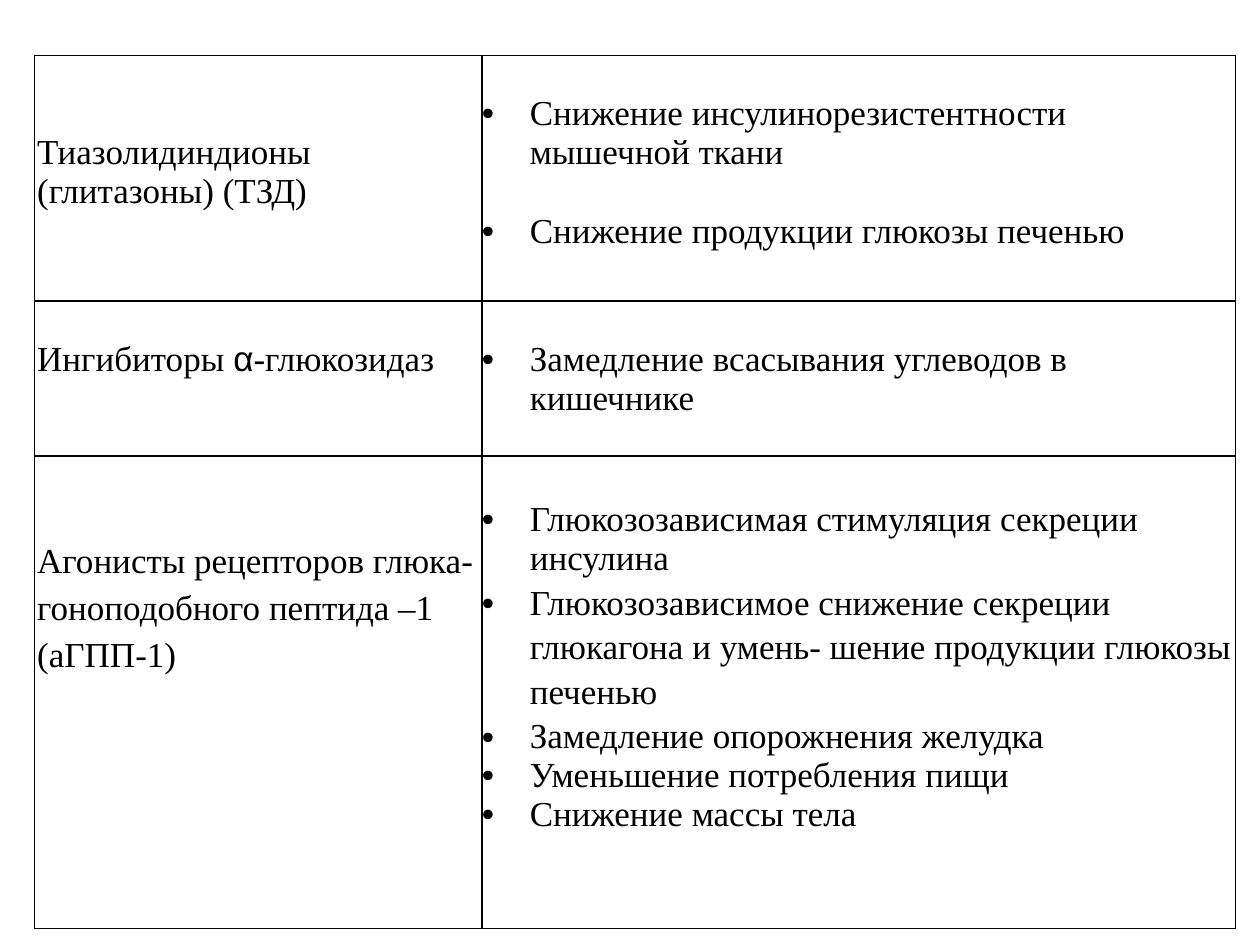
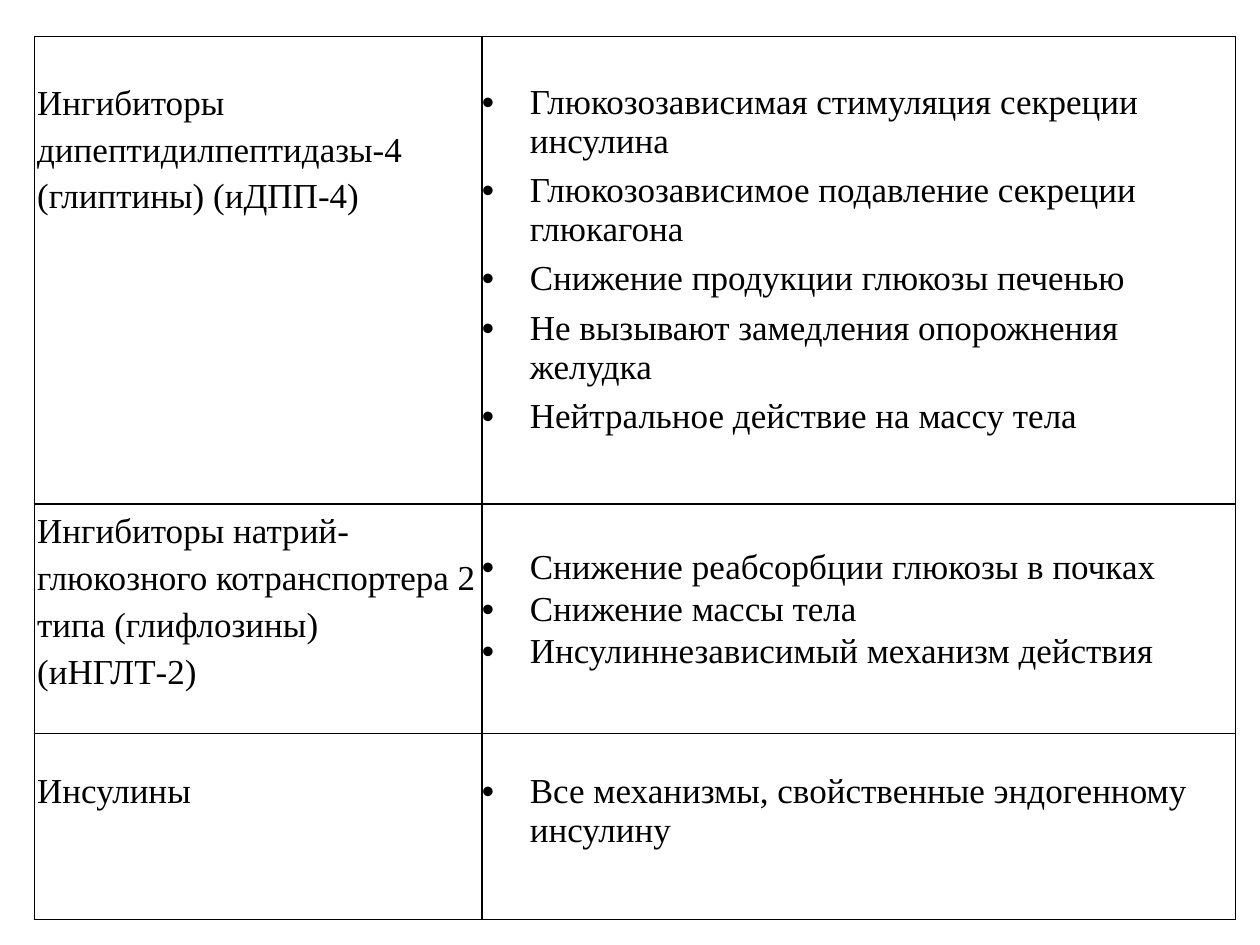
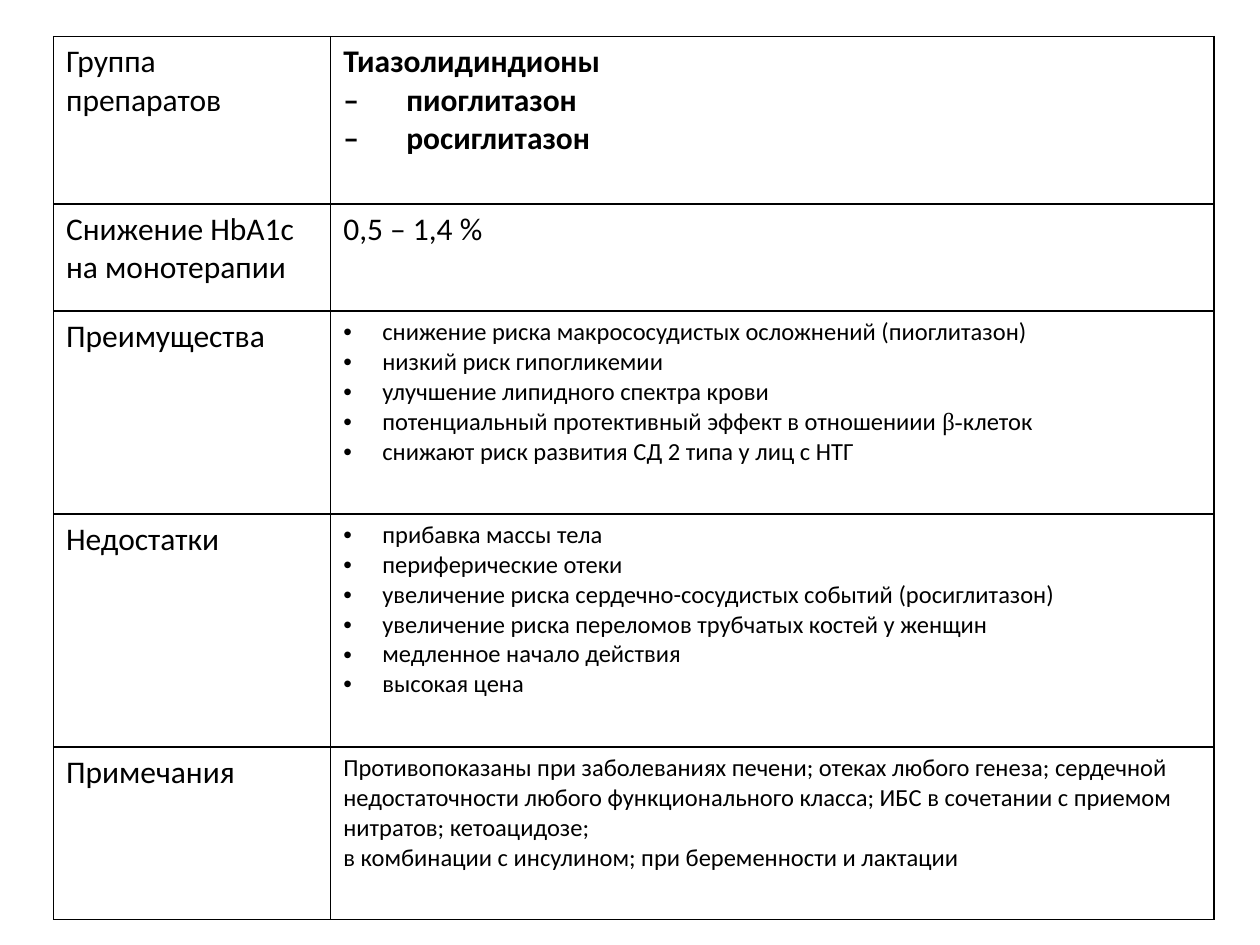
from lxml import etree
from pptx import Presentation
from pptx.dml.color import RGBColor
from pptx.oxml.ns import qn
from pptx.util import Inches, Pt

SLIDE_WIDTH, SLIDE_HEIGHT = 10, 7.5
BLACK, WHITE = "000000", "FFFFFF"
SERIF, SANS = "Times New Roman", "Calibri"
LINE = 0.31
LOOSE = 1.21
BLANK_LAYOUT = 6

SERIF_STYLE = {"name": SERIF, "size": Pt(20), "bold": False}
LABEL_STYLE = {"name": SANS, "size": Pt(18), "bold": False}
STRONG_STYLE = {**LABEL_STYLE, "bold": True}
DETAIL_STYLE = {**LABEL_STYLE, "size": Pt(14)}


def colour(value):
    return RGBColor.from_string(value)


def child(parent, tag, **attributes):
    return etree.SubElement(parent, qn(tag), attributes)


def set_indent(para, left, bullet):
    properties = para._p.get_or_add_pPr()
    properties.set("marL", str(Inches(left)))
    properties.set("indent", str(-Inches(left) if bullet else 0))
    if bullet:
        child(properties, "a:buFont", typeface="Arial")
        child(properties, "a:buChar", char=bullet)
    else:
        child(properties, "a:buNone")


def item(*spans, before=0, spacing=1.0):
    return {"spans": spans, "before": before, "spacing": spacing}


def block(*items, style=SERIF_STYLE, left=0.0, bullet=None, top=0.0):
    items = [item(entry) if isinstance(entry, str) else entry for entry in items]
    return {"items": items, "style": style, "left": left, "bullet": bullet, "top": top}


def drug_group(text, top=LINE, spacing=1.0):
    spans = text if isinstance(text, tuple) else (text,)
    return block(item(*spans, spacing=spacing), left=0.02, top=top)


def effects(*items, top=LINE):
    return block(*items, left=0.38, bullet="•", top=top)


def label(text):
    return block(text, style=LABEL_STYLE)


def details(*items):
    return block(*items, style=DETAIL_STYLE, left=0.31, bullet="•")


def write_block(cell, content):
    frame = cell.text_frame
    for index, entry in enumerate(content["items"]):
        para = frame.add_paragraph() if index else frame.paragraphs[0]
        para.line_spacing = entry["spacing"]
        para.space_before = Pt(entry["before"])
        set_indent(para, content["left"], content["bullet"])
        for part in entry["spans"]:
            text, font_name = part if isinstance(part, tuple) else (part, None)
            span = para.add_run()
            span.text = text
            for key, value in content["style"].items():
                setattr(span.font, key, value)
            if font_name:
                span.font.name = font_name
            span.font.color.rgb = colour(BLACK)


def draw_borders(cell):
    properties = cell._tc.get_or_add_tcPr()
    for side in "LRTB":
        line = child(properties, f"a:ln{side}", w=str(Pt(1)))
        child(child(line, "a:solidFill"), "a:srgbClr", val=BLACK)


def add_grid(deck, top, columns, heights, rows, side_margin, top_margin, fill=None):
    page = deck.slides.add_slide(deck.slide_layouts[BLANK_LAYOUT])
    width, height = sum(columns), sum(heights)
    left = (SLIDE_WIDTH - width) / 2 + (0.04 if side_margin == 0 else 0.03)
    box = page.shapes.add_table(
        len(rows), len(columns), Inches(left), Inches(top), Inches(width), Inches(height)
    )
    table = box.table
    table.first_row = table.horz_banding = False
    for column, size in zip(table.columns, columns):
        column.width = Inches(size)
    for row, size, contents in zip(table.rows, heights, rows):
        row.height = Inches(size)
        for cell, content in zip(row.cells, contents):
            margins = {
                "margin_left": side_margin,
                "margin_right": side_margin,
                "margin_top": top_margin + content["top"],
                "margin_bottom": top_margin,
            }
            for key, value in margins.items():
                setattr(cell, key, Inches(value))
            draw_borders(cell)
            if fill:
                cell.fill.solid()
                cell.fill.fore_color.rgb = colour(fill)
            else:
                cell.fill.background()
            write_block(cell, content)


def add_mechanisms(deck, top, heights, rows):
    add_grid(deck, top, [3.55, 5.98], heights, rows, 0, 0)


def add_profile(deck, heights, rows):
    add_grid(deck, 0.29, [2.2, 7.01], heights, rows, 0.1, 0.05, WHITE)


def main():
    deck = Presentation()
    deck.slide_width, deck.slide_height = Inches(SLIDE_WIDTH), Inches(SLIDE_HEIGHT)

    add_mechanisms(deck, 0.44, [1.95, 1.23, 3.75], [
        (
            drug_group("Тиазолидиндионы (глитазоны) (ТЗД)", top=2 * LINE),
            effects(
                "Снижение инсулинорезистентности мышечной ткани",
                item("Снижение продукции глюкозы печенью", before=22.7),
            ),
        ),
        (
            drug_group(("Ингибиторы ", ("α", "Arial"), "-глюкозидаз")),
            effects("Замедление всасывания углеводов в кишечнике"),
        ),
        (
            drug_group(
                "Агонисты рецепторов глюка- гоноподобного пептида –1 (аГПП-1)",
                top=2 * LINE, spacing=LOOSE,
            ),
            effects(
                "Глюкозозависимая стимуляция секреции инсулина",
                item(
                    "Глюкозозависимое снижение секреции глюкагона и умень- "
                    "шение продукции глюкозы печенью", spacing=1.15,
                ),
                item("Замедление опорожнения желудка", spacing=1.15),
                "Уменьшение потребления пищи",
                "Снижение массы тела",
                top=0.35,
            ),
        ),
    ])

    add_mechanisms(deck, 0.29, [3.71, 1.82, 1.48], [
        (
            drug_group(
                "Ингибиторы дипептидилпептидазы-4 (глиптины) (иДПП-4)", spacing=LOOSE
            ),
            effects(
                "Глюкозозависимая стимуляция секреции инсулина",
                *(item(text, before=6) for text in (
                    "Глюкозозависимое подавление секреции глюкагона",
                    "Снижение продукции глюкозы печенью",
                    "Не вызывают замедления опорожнения желудка",
                    "Нейтральное действие на массу тела",
                )),
                top=0.37,
            ),
        ),
        (
            drug_group(
                "Ингибиторы натрий-глюкозного котранспортера 2 типа "
                "(глифлозины) (иНГЛТ-2)", top=0, spacing=LOOSE,
            ),
            effects(
                "Снижение реабсорбции глюкозы в почках",
                item("Снижение массы тела", before=1.8),
                item("Инсулиннезависимый механизм действия", before=1.8),
                top=0.35,
            ),
        ),
        (
            drug_group("Инсулины"),
            effects("Все механизмы, свойственные эндогенному инсулину"),
        ),
    ])

    add_profile(deck, [1.33, 0.85, 1.61, 1.85, 1.37], [
        (
            label("Группа препаратов"),
            block("Тиазолидиндионы", "–\tпиоглитазон", "–\tросиглитазон", style=STRONG_STYLE),
        ),
        (label("Снижение HbA1c на монотерапии"), label("0,5 – 1,4 %")),
        (
            label("Преимущества"),
            details(
                "снижение риска макрососудистых осложнений (пиоглитазон)",
                "низкий риск гипогликемии",
                "улучшение липидного спектра крови",
                item("потенциальный протективный эффект в отношениии ", ("β-", SERIF), "клеток"),
                "снижают риск развития СД 2 типа у лиц с НТГ",
            ),
        ),
        (
            label("Недостатки"),
            details(
                "прибавка массы тела",
                "периферические отеки",
                "увеличение риска сердечно-сосудистых событий (росиглитазон)",
                "увеличение риска переломов трубчатых костей у женщин",
                "медленное начало действия",
                "высокая цена",
            ),
        ),
        (
            label("Примечания"),
            block(
                "Противопоказаны при заболеваниях печени; отеках любого генеза; сердечной "
                "недостаточности любого функционального класса; ИБС в сочетании с приемом "
                "нитратов; кетоацидозе;",
                "в комбинации с инсулином; при беременности и лактации",
                style=DETAIL_STYLE,
            ),
        ),
    ])

    deck.save("out.pptx")


if __name__ == "__main__":
    main()
